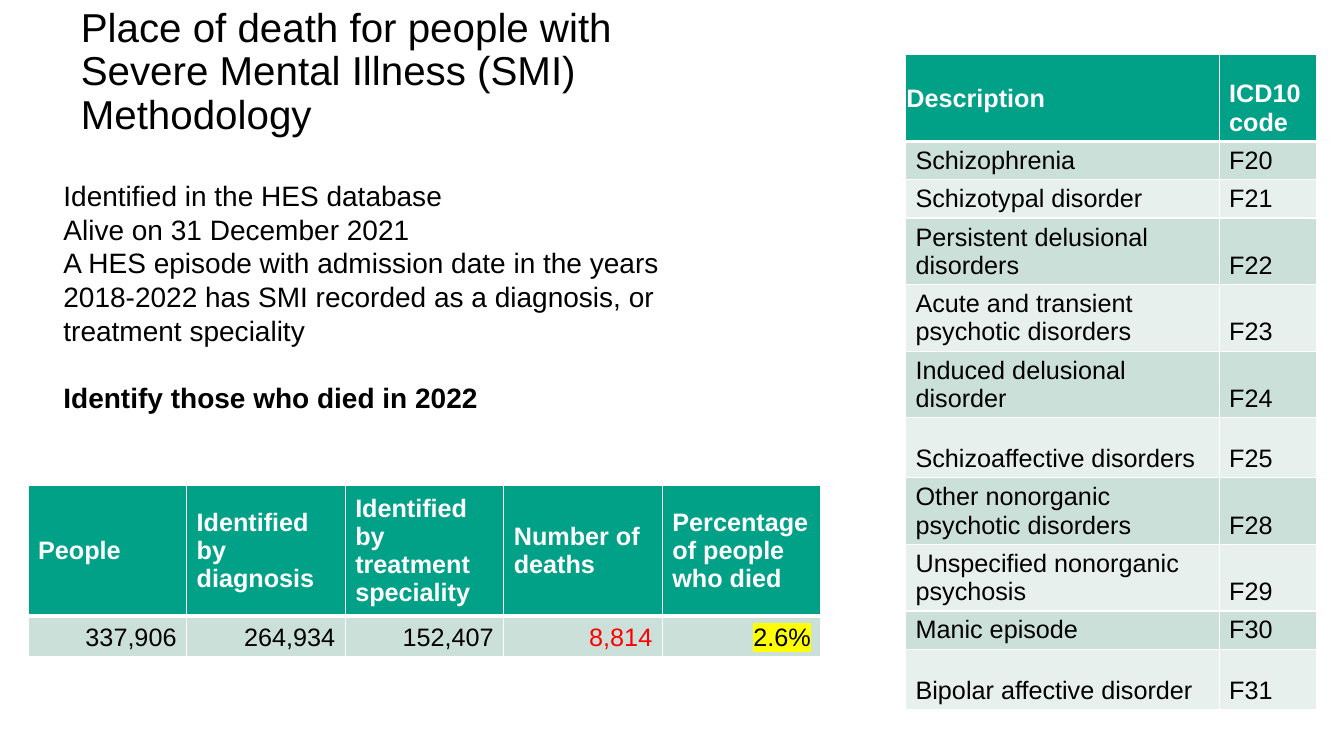
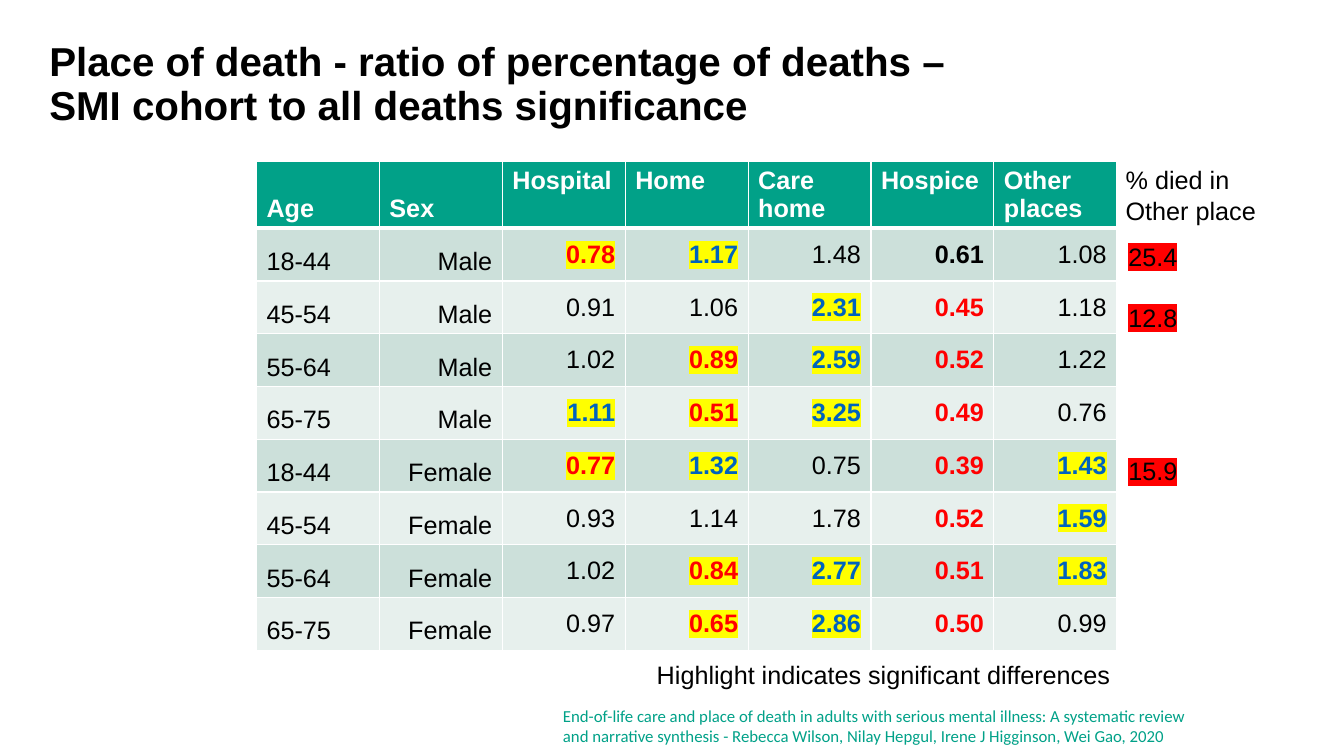
from dataclasses import dataclass
from lxml.etree import SubElement
from pptx import Presentation
from pptx.dml.color import RGBColor
from pptx.enum.text import MSO_ANCHOR, MSO_AUTO_SIZE, PP_ALIGN
from pptx.oxml.ns import qn
from pptx.util import Pt

COLORS = {
    "black": "000000",
    "white": "FFFFFF",
    "green": "01A188",
    "dark_band": "CCE0DA",
    "light_band": "E7F0ED",
    "red": "FF0000",
    "blue": "0063BE",
    "yellow": "FFFF00",
}
LEFT, RIGHT = PP_ALIGN.LEFT, PP_ALIGN.RIGHT
TOP, MIDDLE, BOTTOM = MSO_ANCHOR.TOP, MSO_ANCHOR.MIDDLE, MSO_ANCHOR.BOTTOM


@dataclass
class Span:
    text: str
    color: str = "black"
    bold: bool = False
    highlight: str = ""


def significant(value):
    return Span(value, "blue" if float(value) > 1 else "red", True, "yellow")


def low(value):
    return Span(value, "red", True)


def as_span(item):
    return item if isinstance(item, Span) else Span(item)


class SlideBuilder:
    font = "Arial"
    title_size = 28.8
    table_size = 18

    def __init__(self):
        self.deck = Presentation()
        self.deck.slide_width, self.deck.slide_height = Pt(960), Pt(540)
        self.page = None

    def add_run(self, para, span, size, font=None):
        run = para.add_run()
        run.text = span.text
        run.font.name = font or self.font
        run.font.size = Pt(size)
        run.font.bold = span.bold
        run.font.color.rgb = RGBColor.from_string(COLORS[span.color])
        if span.highlight:
            properties = run.font._element
            highlight = SubElement(properties, qn("a:highlight"))
            SubElement(highlight, qn("a:srgbClr"), val=COLORS[span.highlight])
            properties.find(qn("a:solidFill")).addnext(highlight)

    def new_page(self, frame, lines, bold=False):
        self.page = self.deck.slides.add_slide(self.deck.slide_layouts[5])
        title = self.page.shapes.title
        title.left, title.top, title.width, title.height = map(Pt, frame)
        title.text_frame.auto_size = MSO_AUTO_SIZE.NONE
        title.text_frame.vertical_anchor = MIDDLE
        para = title.text_frame.paragraphs[0]
        para.alignment = LEFT
        para.line_spacing = 0.9
        for index, line in enumerate(lines):
            if index:
                para.add_line_break()
            self.add_run(para, Span(line, bold=bold), self.title_size)

    def text(self, frame, lines, size, align=LEFT, gaps=None, font=None):
        box = self.page.shapes.add_textbox(*map(Pt, frame))
        box.text_frame.word_wrap = True
        for index, line in enumerate(lines):
            para = box.text_frame.add_paragraph() if index else box.text_frame.paragraphs[0]
            para.alignment = align
            para.space_before = Pt((gaps or {}).get(index, 0))
            self.add_run(para, as_span(line), size, font)

    def border(self, cell, bottom):
        properties = cell._tc.get_or_add_tcPr()
        widths = {"a:lnL": 1, "a:lnR": 1, "a:lnT": 1, "a:lnB": bottom}
        for index, (tag, width) in enumerate(widths.items()):
            line = SubElement(properties, qn(tag), w=str(int(Pt(width))))
            fill = SubElement(line, qn("a:solidFill"))
            SubElement(fill, qn("a:srgbClr"), val=COLORS["white"])
            properties.insert(index, line)

    def table(self, corner, widths, heights, header, rows, head_anchors, anchors, aligns):
        frame = self.page.shapes.add_table(
            len(heights), len(widths), *map(Pt, (*corner, sum(widths), sum(heights)))
        )
        table = frame.table
        for column, width in zip(table.columns, widths):
            column.width = Pt(width)
        for row, height in zip(table.rows, heights):
            row.height = Pt(height)
        heading = [Span(label, "white", True) for label in header]
        for row_index, items in enumerate([heading, *rows]):
            is_head = row_index == 0
            band = "green" if is_head else ("light_band", "dark_band")[row_index % 2]
            for column_index, item in enumerate(items):
                cell = table.cell(row_index, column_index)
                cell.fill.solid()
                cell.fill.fore_color.rgb = RGBColor.from_string(COLORS[band])
                cell.vertical_anchor = (head_anchors if is_head else anchors)[column_index]
                para = cell.text_frame.paragraphs[0]
                para.alignment = LEFT if is_head else aligns[column_index]
                self.add_run(para, as_span(item), self.table_size)
                self.border(cell, 3 if is_head else 1)
        return table


def methodology(builder):
    builder.new_page(
        (50.5, 4.5, 902, 95),
        ["Place of death for people with ", "Severe Mental Illness (SMI)", "Methodology"],
    )
    diagnoses = [
        ("Schizophrenia", "F20"),
        ("Schizotypal disorder", "F21"),
        ("Persistent delusional disorders", "F22"),
        ("Acute and transient psychotic disorders", "F23"),
        ("Induced delusional disorder", "F24"),
        ("Schizoaffective disorders", "F25"),
        ("Other nonorganic psychotic disorders", "F28"),
        ("Unspecified nonorganic psychosis", "F29"),
        ("Manic episode", "F30"),
        ("Bipolar affective disorder", "F31"),
    ]
    codes = builder.table(
        (646.8, 39), [224, 69.5], [62, 27, 27, 47.5, 47.5, 47.5, 43, 47.5, 47.5, 27, 43],
        ["Description", "ICD10 code"], diagnoses,
        [MIDDLE, BOTTOM], [BOTTOM] * 2, [LEFT] * 2,
    )
    description = codes.cell(0, 0)
    description.margin_left = description.margin_top = description.margin_right = Pt(0.7)
    description.margin_bottom = Pt(0)
    builder.text(
        (38.2, 124, 480, 201),
        [
            "Identified in the HES database",
            "Alive on 31 December 2021",
            "A HES episode with admission date in the years 2018-2022 has SMI "
            "recorded as a diagnosis, or treatment speciality",
            Span("Identify those who died in 2022", bold=True),
        ],
        20, gaps={3: 24},
    )
    builder.table(
        (20, 346.5), [113.3] * 5, [93, 28],
        ["People", "Identified by diagnosis", "Identified by treatment speciality",
         "Number of deaths", "Percentage of people who died"],
        [["337,906", "264,934", "152,407", Span("8,814", "red"),
          Span("2.6%", highlight="yellow")]],
        [MIDDLE] * 5, [BOTTOM] * 5, [RIGHT] * 5,
    )


def ratios(builder):
    builder.new_page(
        (28, 28, 901.5, 66),
        ["Place of death - ratio of percentage of deaths – ",
         "SMI cohort to all deaths significance"],
        bold=True,
    )
    sig = significant
    ages = ["18-44", "45-54", "55-64", "65-75"]
    groups = [(age, sex) for sex in ("Male", "Female") for age in ages]
    values = [
        [sig("0.78"), sig("1.17"), "1.48", Span("0.61", bold=True), "1.08"],
        ["0.91", "1.06", sig("2.31"), low("0.45"), "1.18"],
        ["1.02", sig("0.89"), sig("2.59"), low("0.52"), "1.22"],
        [sig("1.11"), sig("0.51"), sig("3.25"), low("0.49"), "0.76"],
        [sig("0.77"), sig("1.32"), "0.75", low("0.39"), sig("1.43")],
        ["0.93", "1.14", "1.78", low("0.52"), sig("1.59")],
        ["1.02", sig("0.84"), sig("2.77"), low("0.51"), sig("1.83")],
        ["0.97", sig("0.65"), sig("2.86"), low("0.50"), "0.99"],
    ]
    builder.table(
        (183.2, 115.5), [87.8] * 7, [47.5] + [37.7] * 8,
        ["Age", "Sex", "Hospital", "Home", "Care home", "Hospice", "Other places"],
        [[*group, *row] for group, row in zip(groups, values)],
        [BOTTOM] * 2 + [TOP] * 5, [BOTTOM] * 2 + [MIDDLE] * 5, [LEFT] + [RIGHT] * 6,
    )
    builder.text(
        (183, 467.5, 622, 29), ["Highlight indicates significant differences "], 18, RIGHT
    )
    builder.text(
        (799, 168.5, 56, 204),
        [Span(share, highlight="red") for share in ("25.4", "12.8", "15.9")],
        18, gaps={1: 22, 2: 88},
    )
    builder.text((797, 114, 155.5, 51), ["% died in", "Other place"], 18)
    builder.text(
        (395, 500.5, 480, 36),
        [Span("End-of-life care and place of death in adults with serious mental illness: "
              "A systematic review and narrative synthesis - Rebecca Wilson, Nilay Hepgul, "
              "Irene J Higginson, Wei Gao, 2020", "green")],
        12, font="Calibri",
    )


def main():
    builder = SlideBuilder()
    methodology(builder)
    ratios(builder)
    builder.deck.save("out.pptx")


if __name__ == "__main__":
    main()
